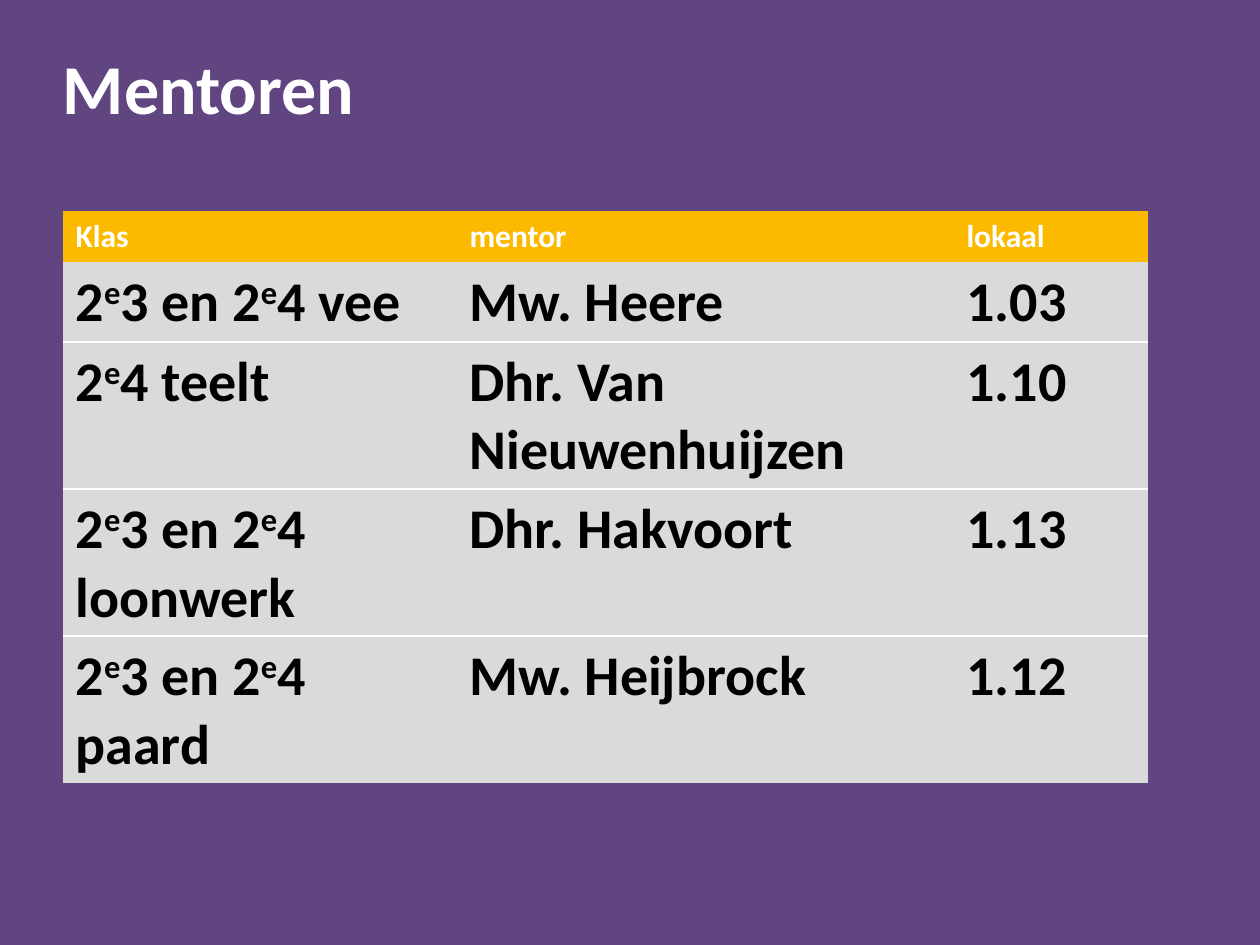
import pptx
import pptx.dml.color
import pptx.enum.text
import pptx.oxml
import pptx.oxml.ns
import pptx.util

PX = 914400 // 126
PURPLE = pptx.dml.color.RGBColor(0x60, 0x45, 0x80)
YELLOW = pptx.dml.color.RGBColor(0xFB, 0xBA, 0x00)
GREY = pptx.dml.color.RGBColor(0xDA, 0xDA, 0xDA)
WHITE = pptx.dml.color.RGBColor(0xFF, 0xFF, 0xFF)
BLACK = pptx.dml.color.RGBColor(0, 0, 0)

NO_STYLE = "{2D5ABB26-0587-4C30-8999-92F81FD0307C}"
ROW_HEIGHT = 51
COLUMN_WIDTHS = [394, 497, 194]
ROWS = [
    ["Klas", "mentor", "lokaal"],
    ["2^e^3 en 2^e^4 vee", "Mw. Heere", "1.03"],
    ["2^e^4 teelt", "Dhr. Van Nieuwenhuijzen", "1.10"],
    ["2^e^3 en 2^e^4 loonwerk", "Dhr. Hakvoort", "1.13"],
    ["2^e^3 en 2^e^4 paard", "Mw. Heijbrock", "1.12"],
]


def write_text(p, text, size, color):
    """Write bold runs, raising the parts between carets."""
    for i, part in enumerate(text.split("^")):
        r = p.add_run()
        r.text = part
        font = {"name": "Calibri", "size": pptx.util.Pt(size), "bold": True}
        for name, value in font.items():
            setattr(r.font, name, value)
        r.font.color.rgb = color
        if i % 2:
            r.font._element.set("baseline", "30000")


def add_border(cell, side):
    """Add a thin white line to one side of a cell."""
    cell._tc.get_or_add_tcPr().append(pptx.oxml.parse_xml(
        f'<a:{side} {pptx.oxml.ns.nsdecls("a")} w="12700"><a:solidFill>'
        f'<a:srgbClr val="{WHITE}"/></a:solidFill></a:{side}>'))


def add_title(slide, x, y, w, h):
    """Place the slide title in the given box."""
    sp = slide.shapes.add_textbox(x * PX, y * PX, w * PX, h * PX)
    tf = sp.text_frame
    layout = {"word_wrap": True, "margin_left": 0, "margin_right": 0,
              "margin_top": 0, "margin_bottom": 0,
              "vertical_anchor": pptx.enum.text.MSO_ANCHOR.TOP}
    for name, value in layout.items():
        setattr(tf, name, value)
    p = tf.paragraphs[0]
    p.line_spacing = 0.83
    write_text(p, "Mentoren", 40, WHITE)


def add_mentor_table(slide, x, y, w, h):
    """Place the table of classes, mentors and rooms in the given box."""
    sp = slide.shapes.add_table(len(ROWS), len(COLUMN_WIDTHS),
                                x * PX, y * PX, w * PX, h * PX)
    table = sp.table
    table._tbl.tblPr.find(pptx.oxml.ns.qn("a:tableStyleId")).text = NO_STYLE
    table.horz_banding = False
    for column, width in zip(table.columns, COLUMN_WIDTHS):
        column.width = width * PX
    for i, texts in enumerate(ROWS):
        table.rows[i].height = ROW_HEIGHT * PX
        fill, color, size = (GREY, BLACK, 32) if i else (YELLOW, WHITE, 18)
        for j, text in enumerate(texts):
            cell = table.cell(i, j)
            if i > 1:
                add_border(cell, "lnT")
            if 0 < i < len(ROWS) - 1:
                add_border(cell, "lnB")
            cell.fill.solid()
            cell.fill.fore_color.rgb = fill
            write_text(cell.text_frame.paragraphs[0], text, size, color)
    sp.height = h * PX


def main():
    """Build the slide and save it."""
    prs = pptx.Presentation()
    prs.slide_width = 1260 * PX
    prs.slide_height = 945 * PX
    slide = prs.slides.add_slide(prs.slide_layouts[6])
    slide.background.fill.solid()
    slide.background.fill.fore_color.rgb = PURPLE
    add_title(slide, 63, 59, 1134, 127)
    add_mentor_table(slide, 63, 211, 1085, 505)
    prs.save("out.pptx")


if __name__ == "__main__":
    main()
